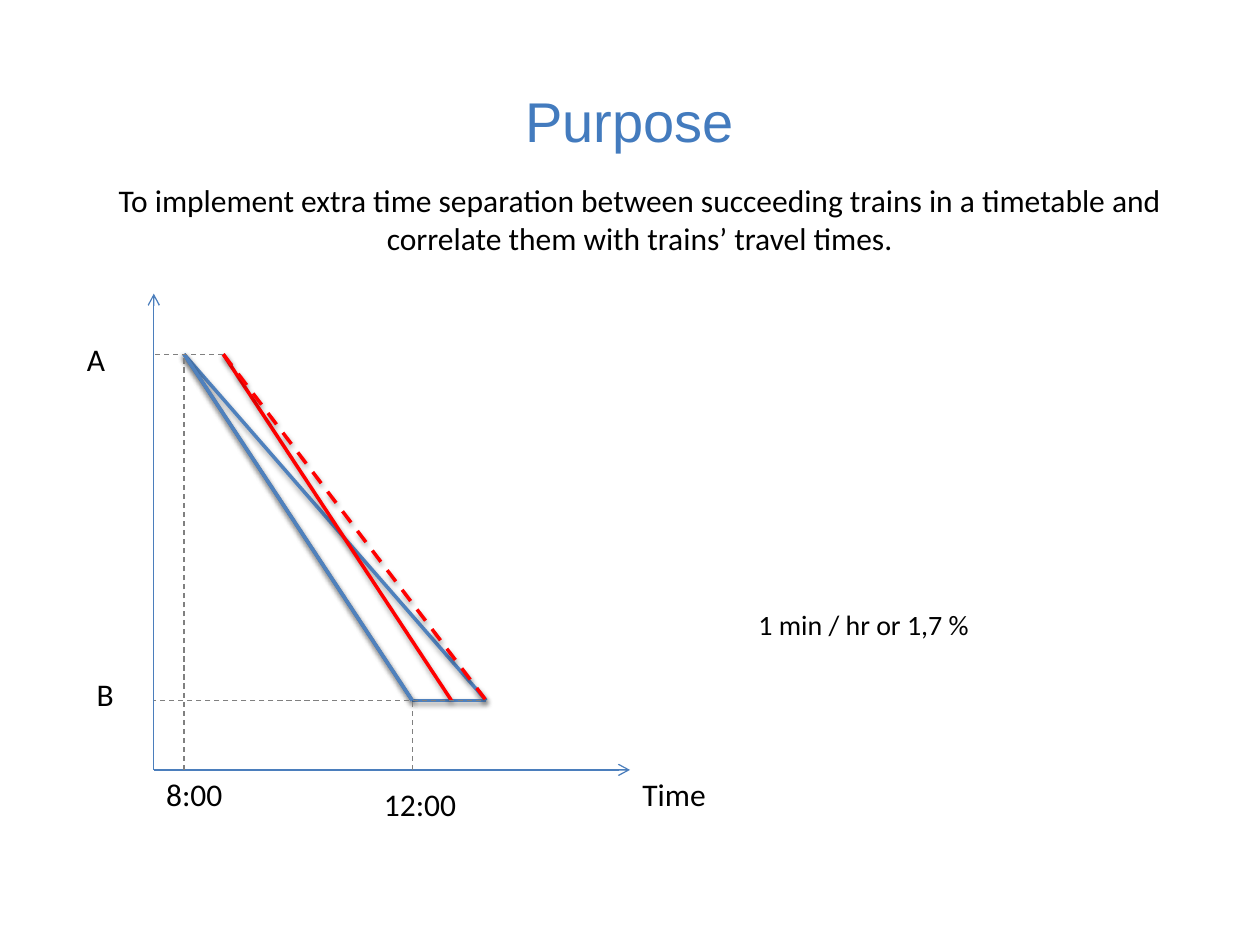
import pptx
import pptx.util
import pptx.dml.color
import pptx.enum.dml
import pptx.enum.shapes
import pptx.enum.text
import lxml.etree
from pptx.oxml.ns import qn

Cm, Pt = pptx.util.Cm, pptx.util.Pt
RGB = pptx.dml.color.RGBColor
DASH = pptx.enum.dml.MSO_LINE.DASH
ANCHOR = pptx.enum.text.MSO_ANCHOR
ALIGN = pptx.enum.text.PP_ALIGN

WHITE, BLACK = RGB(255, 255, 255), RGB(0, 0, 0)
TITLE, AXIS = RGB(0x43, 0x7B, 0xBE), RGB(0x4B, 0x7E, 0xBC)
BLUE, RED, GREY = RGB(0x4F, 0x81, 0xBD), RGB(255, 0, 0), RGB(128, 128, 128)

# Diagram grid in cm: stations run down, time runs right
LEFT, RIGHT, TOP, BASE = 3.1, 12.7, 5.92, 15.52
A, B = 7.14, 14.12
EIGHT, NOON, LATE = 3.71, 8.31, 9.8
LAG = 0.79  # time between the first and the second train

first = (EIGHT, A), (NOON, B)
slow = (EIGHT, A), (LATE, B)
delay = (LATE, B), (NOON, B)
second = (EIGHT + LAG, A), (NOON + LAG, B)
padded = (EIGHT + LAG, A), (LATE, B)

wedge = [slow, delay, first[::-1]]
axes = [((LEFT, BASE), (RIGHT, BASE)), ((LEFT, BASE), (LEFT, TOP))]
trains = [(first, BLUE, False), (second, RED, False), (padded, RED, True)]
guides = [
    ((EIGHT + LAG, A), (LEFT, A)),
    ((9.7, B), (LEFT, B)),
    ((EIGHT, BASE), (EIGHT, A)),
    ((NOON, BASE), (NOON, B)),
]

PURPOSE = ("To implement extra time separation between succeeding trains in a "
           "timetable and correlate them with trains’ travel times.")
# text, box in cm, size, font, colour, alignment, anchor, fill
heads = [
    ("Purpose", (0.3, 1.52, 24.8, 1.8), 32, "Arial", TITLE,
     ALIGN.CENTER, ANCHOR.MIDDLE, None),
    (PURPOSE, (1.5, 3.53, 22.8, 2.2), 18, "Calibri", BLACK,
     ALIGN.CENTER, ANCHOR.TOP, None),
    ("1 min / hr or 1,7 %", (14.7, 12.12, 5.42, 0.94), 16, "Calibri", BLACK,
     ALIGN.CENTER, ANCHOR.TOP, WHITE),
]
labels = [("A", 1.5, 6.73, 0.8), ("B", 1.7, 13.49, 0.8),
          ("8:00", LEFT, 15.49, 2.2), ("12:00", 7.49, 15.7, 2.2),
          ("Time", RIGHT, 15.49, 2.2)]


def add_text(shapes, text, box, size=18, font="Calibri", color=BLACK,
             align=ALIGN.LEFT, anchor=ANCHOR.TOP, fill=None):
    shape = shapes.add_textbox(*map(Cm, box))
    if fill is not None:
        shape.fill.solid()
        shape.fill.fore_color.rgb = fill
    frame = shape.text_frame
    frame.word_wrap = True
    frame.vertical_anchor = anchor
    frame.text = text
    para = frame.paragraphs[0]
    para.alignment = align
    face = para.runs[0].font
    face.size, face.name, face.color.rgb = Pt(size), font, color


def add_line(shapes, ends, color, width=0.75, dash=False, arrow=False,
             shadow=False):
    start, end = ends
    line = shapes.add_connector(pptx.enum.shapes.MSO_CONNECTOR.STRAIGHT,
                                *map(Cm, start + end))
    line.line.color.rgb = color
    line.line.width = Pt(width)
    if dash:
        line.line.dash_style = DASH
    props = line._element.spPr
    make = lxml.etree.SubElement
    if arrow:
        make(props.find(qn("a:ln")), qn("a:tailEnd"), type="arrow")
    effects = make(props, qn("a:effectLst"))
    if shadow:
        outer = make(effects, qn("a:outerShdw"), blurRad=str(Pt(3.1)),
                     dist=str(Pt(1.6)), dir="5400000", rotWithShape="0")
        tint = make(outer, qn("a:srgbClr"), val=str(BLACK))
        make(tint, qn("a:alpha"), val="38000")


def main():
    deck = pptx.Presentation()
    deck.slide_width, deck.slide_height = Cm(25.4), Cm(19.05)
    shapes = deck.slides.add_slide(deck.slide_layouts[6]).shapes
    for head in heads:
        add_text(shapes, *head)
    group = shapes.add_group_shape().shapes
    for ends in wedge:
        add_line(group, ends, BLUE, 2, shadow=True)
    for ends in axes:
        add_line(shapes, ends, AXIS, arrow=True)
    for ends, color, dash in trains:
        add_line(shapes, ends, color, 2, dash, shadow=True)
    for ends in guides:
        add_line(shapes, ends, GREY, dash=True)
    for text, left, top, width in labels:
        add_text(shapes, text, (left, top, width, 1.02))
    deck.save("out.pptx")


if __name__ == "__main__":
    main()
